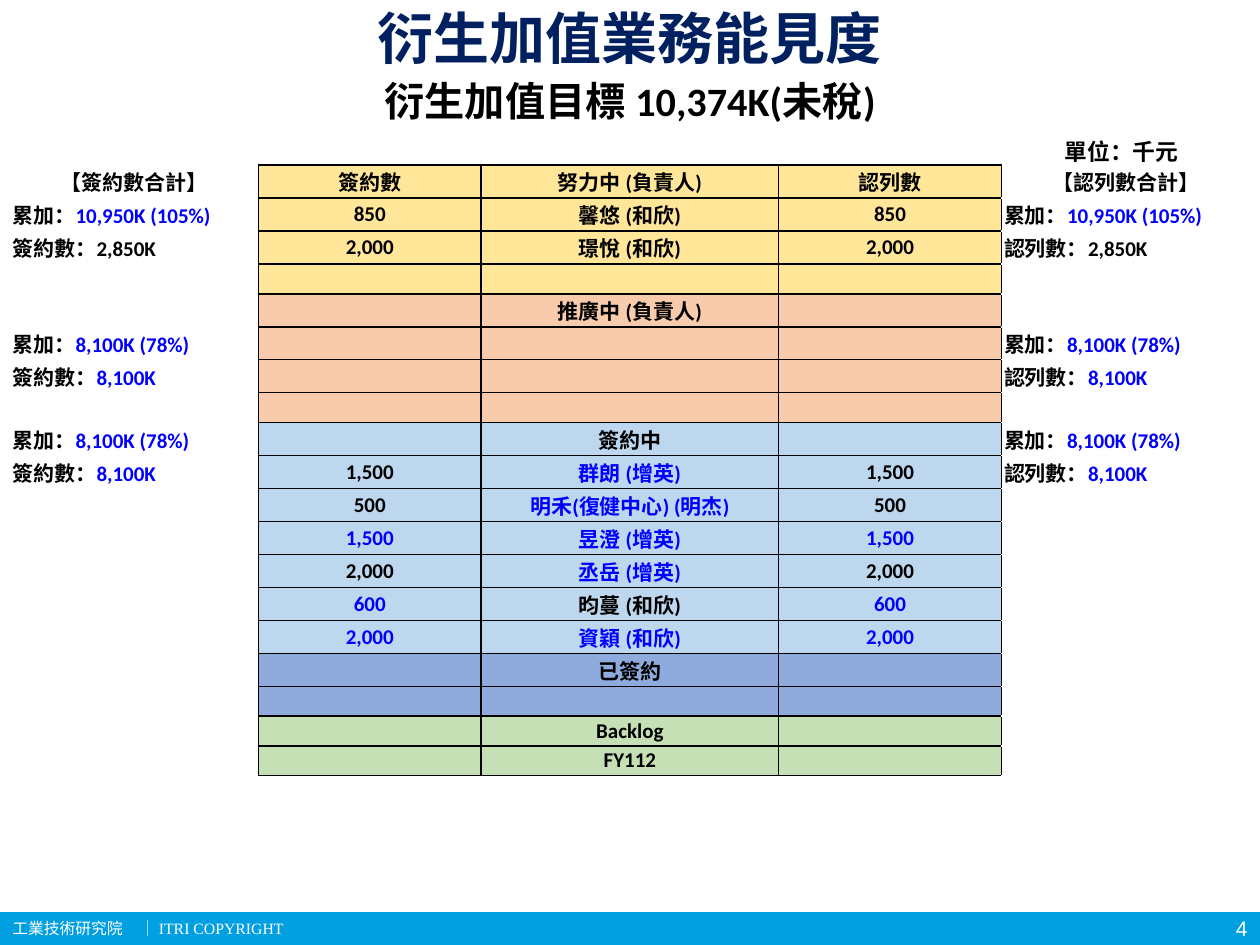
from typing import NamedTuple

from lxml import etree
from pptx import Presentation
from pptx.dml.color import RGBColor
from pptx.enum.shapes import MSO_SHAPE
from pptx.enum.text import MSO_ANCHOR, MSO_AUTO_SIZE, PP_ALIGN
from pptx.oxml.ns import qn
from pptx.util import Inches, Pt

RECTANGLE = MSO_SHAPE.RECTANGLE
MIDDLE = MSO_ANCHOR.MIDDLE
NO_AUTOSIZE = MSO_AUTO_SIZE.NONE
LEFT, CENTER, RIGHT = PP_ALIGN.LEFT, PP_ALIGN.CENTER, PP_ALIGN.RIGHT

BLACK = RGBColor(0x00, 0x00, 0x00)
WHITE = RGBColor(0xFF, 0xFF, 0xFF)
BLUE = RGBColor(0x00, 0x00, 0xFF)
NAVY = RGBColor(0x00, 0x20, 0x60)
FOOTER_BLUE = RGBColor(0x00, 0x9F, 0xE2)
YELLOW = RGBColor(0xFF, 0xE6, 0x99)
ORANGE = RGBColor(0xF8, 0xCB, 0xAD)
LIGHT_BLUE = RGBColor(0xBD, 0xD7, 0xEE)
MID_BLUE = RGBColor(0x8F, 0xAA, 0xDC)
GREEN = RGBColor(0xC5, 0xE0, 0xB4)

LATIN, CJK, SERIF = "Calibri", "Noto Sans CJK SC", "Times New Roman"
CELL_SIZE = 12
TABLE_HEIGHT = 4.49
COLUMN_WIDTHS = (1.97, 1.77, 2.36, 1.77, 1.97)
CELL_MARGINS = {"margin_left": 0.02, "margin_top": 0.01,
                "margin_right": 0.02, "margin_bottom": 0.01}


class Part(NamedTuple):
    text: str
    color: RGBColor = BLACK


class Deal(NamedTuple):
    fill: RGBColor
    name: str = ""
    amount: str = ""
    name_color: RGBColor = BLACK
    amount_color: RGBColor = BLACK


class Subtotal(NamedTuple):
    row: int
    cumulative: str
    amount: str
    amount_color: RGBColor = BLUE


class Label(NamedTuple):
    text: str
    left: float
    top: float
    width: float
    height: float
    size: float
    font: str
    color: RGBColor
    bold: bool = True
    align: PP_ALIGN = CENTER
    inset: float = 0.1


DEALS = [
    Deal(YELLOW, "努力中 (負責人)"),
    Deal(YELLOW, "馨悠 (和欣)", "850"),
    Deal(YELLOW, "璟悅 (和欣)", "2,000"),
    Deal(YELLOW),
    Deal(ORANGE, "推廣中 (負責人)"),
    Deal(ORANGE),
    Deal(ORANGE),
    Deal(ORANGE),
    Deal(LIGHT_BLUE, "簽約中"),
    Deal(LIGHT_BLUE, "群朗 (增英)", "1,500", BLUE),
    Deal(LIGHT_BLUE, "明禾(復健中心) (明杰)", "500", BLUE),
    Deal(LIGHT_BLUE, "昱澄 (增英)", "1,500", BLUE, BLUE),
    Deal(LIGHT_BLUE, "丞岳 (增英)", "2,000", BLUE),
    Deal(LIGHT_BLUE, "昀蔓 (和欣)", "600", BLACK, BLUE),
    Deal(LIGHT_BLUE, "資穎 (和欣)", "2,000", BLUE, BLUE),
    Deal(MID_BLUE, "已簽約"),
    Deal(MID_BLUE),
    Deal(GREEN, "Backlog"),
    Deal(GREEN, "FY112"),
]
SUBTOTALS = [
    Subtotal(1, "10,950K (105%)", "2,850K", BLACK),
    Subtotal(5, "8,100K (78%)", "8,100K"),
    Subtotal(8, "8,100K (78%)", "8,100K"),
]
# Outer column, neighbouring amount column, and what both of them count
SIDES = [(0, 1, "簽約數"), (4, 3, "認列數")]

TITLE = Label("衍生加值業務能見度", 0.47, 0, 9.06, 0.59, 32, CJK, NAVY)
SUBTITLE = Label("衍生加值目標 10,374K(未稅)", 0.47, 0.6, 9.06, 0.39, 23, LATIN, BLACK)
TEXT_BOXES = [
    Label("單位：千元", 8.31, 1.06, 1.18, 0.28, 13, CJK, BLACK),
    Label("工業技術研究院\t│ ITRI COPYRIGHT", 0, 7.24, 8.94, 0.26, 9, SERIF, WHITE,
          False, LEFT),
    Label("4", 9.42, 7.24, 0.58, 0.26, 12, "Arial", WHITE, False, RIGHT),
]


def add_run(p, text: str, size: float, font: str, color: RGBColor, bold: bool) -> None:
    r = p.add_run()
    r.text = text
    for name, value in {"size": Pt(size), "name": font, "bold": bold}.items():
        setattr(r.font, name, value)
    r.font.color.rgb = color
    if font == CJK:
        etree.SubElement(r.font._element, qn("a:ea"), typeface=font)


def write_label(sp, label: Label) -> None:
    """Place a text box or placeholder and fill it with one formatted line."""
    for side in ("left", "top", "width", "height"):
        setattr(sp, side, Inches(getattr(label, side)))
    tf = sp.text_frame
    frame_format = {"word_wrap": True, "auto_size": NO_AUTOSIZE, "vertical_anchor": MIDDLE,
                    "margin_left": Inches(label.inset), "margin_right": Inches(label.inset),
                    "margin_top": 0, "margin_bottom": 0}
    for name, value in frame_format.items():
        setattr(tf, name, value)
    p = tf.paragraphs[0]
    p.alignment = label.align
    if "\t" in label.text:
        tabs = etree.SubElement(p._p.get_or_add_pPr(), qn("a:tabLst"))
        etree.SubElement(tabs, qn("a:tab"), pos=str(Inches(1.01)), algn="l")
    p.space_before = Pt(0)
    add_run(p, label.text, label.size, label.font, label.color, label.bold)


def add_borders(cell, edges: str) -> None:
    """Draw a black 1 pt line on each edge named by L, R, T or B."""
    tcPr = cell._tc.get_or_add_tcPr()
    for position, edge in enumerate(edges):
        line = etree.Element(qn(f"a:ln{edge}"), w=str(Pt(1)))
        fill = etree.SubElement(line, qn("a:solidFill"))
        etree.SubElement(fill, qn("a:srgbClr"), val=str(BLACK))
        tcPr.insert(position, line)


def format_cell(cell, fill: RGBColor, edges: str) -> None:
    cell.fill.solid()
    cell.fill.fore_color.rgb = fill
    cell.vertical_anchor = MIDDLE
    for name, value in CELL_MARGINS.items():
        setattr(cell, name, Inches(value))
    add_borders(cell, edges)
    # Keeps empty cells from stretching their row
    end = etree.SubElement(cell.text_frame.paragraphs[0]._p, qn("a:endParaRPr"),
                           sz=str(CELL_SIZE * 100))
    etree.SubElement(end, qn("a:latin"), typeface=LATIN)


def write_cell(cell, parts: list[Part], align: PP_ALIGN = CENTER) -> None:
    p = cell.text_frame.paragraphs[0]
    p.alignment = align
    for part in parts:
        if part.text:
            add_run(p, part.text, CELL_SIZE, LATIN, part.color, True)


def add_deal_table(s) -> None:
    frame = s.shapes.add_table(len(DEALS), len(COLUMN_WIDTHS), Inches(0.08), Inches(1.31),
                               Inches(sum(COLUMN_WIDTHS)), Inches(TABLE_HEIGHT))
    table = frame.table
    table.first_row = table.horz_banding = False
    for column, width in zip(table.columns, COLUMN_WIDTHS):
        column.width = Inches(width)
    for i, deal in enumerate(DEALS):
        table.rows[i].height = Inches(TABLE_HEIGHT / len(DEALS))
        for j, edges in enumerate(("R", "LRTB", "LRTB", "LRTB", "L")):
            format_cell(table.cell(i, j), deal.fill if len(edges) > 1 else WHITE, edges)
        write_cell(table.cell(i, 2), [Part(deal.name, deal.name_color)])
        for _, column, _ in SIDES:
            write_cell(table.cell(i, column), [Part(deal.amount, deal.amount_color)])
    for outer, inner, measure in SIDES:
        write_cell(table.cell(0, outer), [Part(f"【{measure}合計】")])
        write_cell(table.cell(0, inner), [Part(measure)])
        for sub in SUBTOTALS:
            write_cell(table.cell(sub.row, outer),
                       [Part("累加："), Part(sub.cumulative, BLUE)], LEFT)
            write_cell(table.cell(sub.row + 1, outer),
                       [Part(f"{measure}："), Part(sub.amount, sub.amount_color)], LEFT)


def main() -> None:
    prs = Presentation()
    prs.slide_width, prs.slide_height = Inches(10), Inches(7.5)
    s = prs.slides.add_slide(prs.slide_layouts[0])
    bar = s.shapes.add_shape(RECTANGLE, 0, Inches(7.24), Inches(10), Inches(0.26))
    bar.shadow.inherit = False
    bar.fill.solid()
    bar.fill.fore_color.rgb = FOOTER_BLUE
    bar.line.fill.background()
    add_deal_table(s)
    write_label(s.shapes.title, TITLE)
    write_label(s.placeholders[1], SUBTITLE)
    for label in TEXT_BOXES:
        write_label(s.shapes.add_textbox(0, 0, 0, 0), label)
    prs.save("out.pptx")


if __name__ == "__main__":
    main()
